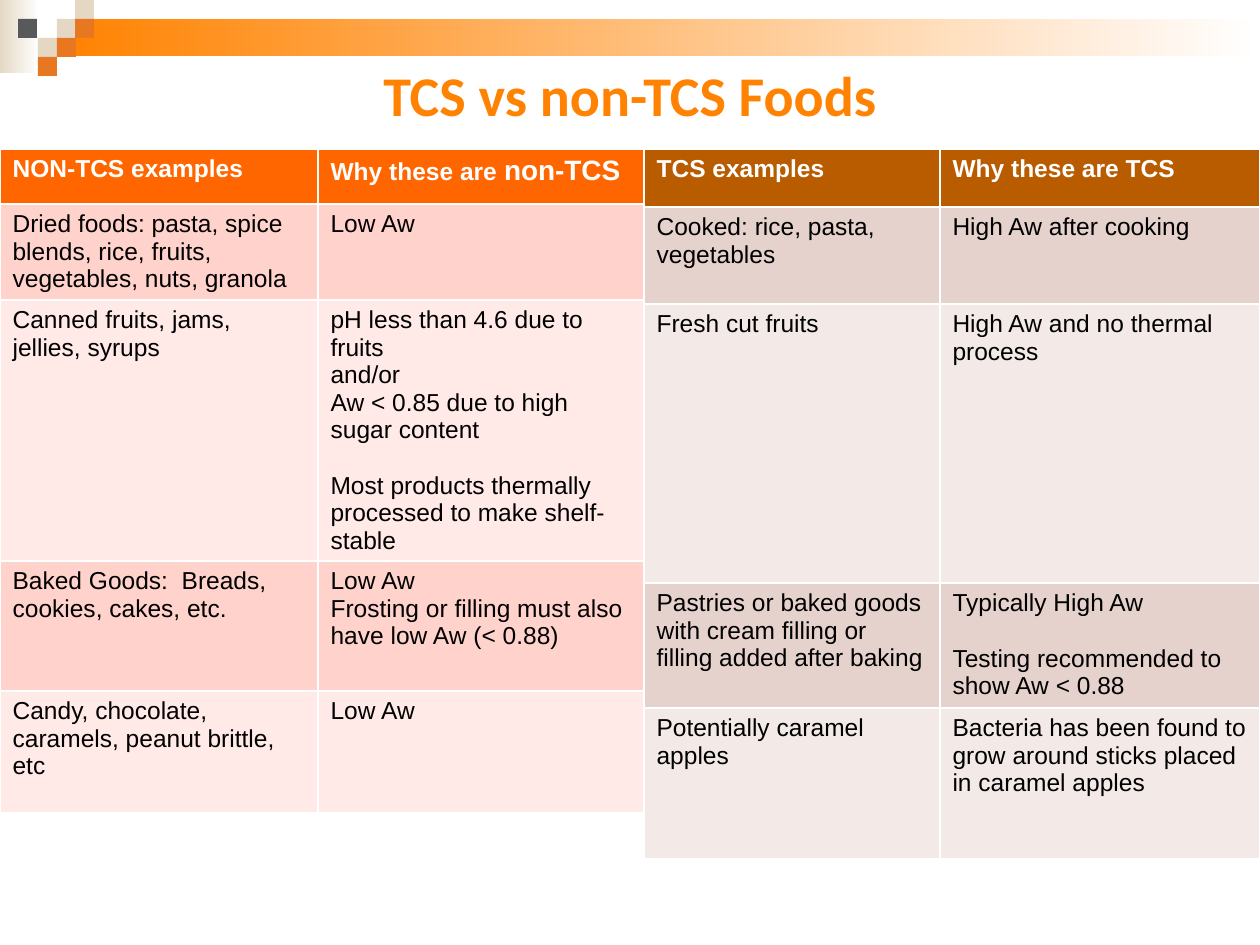
"""Build the slide that compares TCS and non-TCS foods in two tables."""
from pptx import Presentation
from pptx.dml.color import RGBColor
from pptx.enum.shapes import MSO_SHAPE
from pptx.enum.text import MSO_ANCHOR, PP_ALIGN
from pptx.util import Emu, Pt

RECTANGLE = MSO_SHAPE.RECTANGLE
MIDDLE = MSO_ANCHOR.MIDDLE
CENTER = PP_ALIGN.CENTER

WHITE = RGBColor(0xFF, 0xFF, 0xFF)
BLACK = RGBColor(0x00, 0x00, 0x00)
ORANGE = RGBColor(0xFF, 0x82, 0x00)
DARK_ORANGE = RGBColor(0xE8, 0x77, 0x22)
SAND = RGBColor(0xE4, 0xD8, 0xC4)
GRAY = RGBColor(0x58, 0x59, 0x5B)
NON_TCS_HEADER = RGBColor(0xFF, 0x66, 0x00)
NON_TCS_BANDS = [RGBColor(0xFF, 0xD3, 0xCC), RGBColor(0xFF, 0xEA, 0xE7)]
TCS_HEADER = RGBColor(0xB9, 0x5C, 0x00)
TCS_BANDS = [RGBColor(0xE6, 0xD2, 0xCC), RGBColor(0xF3, 0xEA, 0xE7)]

SQUARE = 19
TABLE_TOP = 149


def px(length):
    return Emu(round(length * 914400 / 126))


def add_rectangle(left, top, width, height):
    shape = slide.shapes.add_shape(
        RECTANGLE, px(left), px(top), px(width), px(height)
    )
    shape.shadow.inherit = False
    shape.line.fill.background()
    return shape


presentation = Presentation()
presentation.slide_width = px(1260)
presentation.slide_height = px(945)
slide = presentation.slides.add_slide(presentation.slide_layouts[5])

for left, top, width, height, color in [
    (0, 0, 39, 73, SAND),
    (57, 19, 1203, 37, ORANGE),
]:
    fill = add_rectangle(left, top, width, height).fill
    fill.gradient()
    fill.gradient_angle = 0
    for stop, stop_color, position in zip(fill.gradient_stops, (color, WHITE), (0, 1)):
        stop.color.rgb = stop_color
        stop.position = position

for left, top, color in [
    (57, 19, SAND),
    (75, 0, SAND),
    (75, 19, DARK_ORANGE),
    (38, 38, SAND),
    (18, 19, GRAY),
    (57, 38, DARK_ORANGE),
    (38, 57, DARK_ORANGE),
]:
    fill = add_rectangle(left, top, SQUARE, SQUARE).fill
    fill.solid()
    fill.fore_color.rgb = color

title = slide.shapes.title
slide.shapes.element.append(title.element)
title.left, title.top, title.width, title.height = px(63), px(0), px(1134), px(189)
title.text_frame.text = "TCS vs non-TCS Foods"
title.text_frame.vertical_anchor = MIDDLE
paragraph = title.text_frame.paragraphs[0]
paragraph.alignment = CENTER
font = paragraph.runs[0].font
font.name, font.size, font.bold = "Calibri", Pt(32), True
font.color.rgb = ORANGE

non_tcs_rows = [
    ("NON-TCS examples", "Why these are "),
    ("Dried foods: pasta, spice blends, rice, fruits, vegetables, nuts, granola", "Low Aw"),
    (
        "Canned fruits, jams, jellies, syrups",
        "pH less than 4.6 due to fruits\nand/or\nAw < 0.85 due to high sugar content"
        "\n\nMost products thermally processed to make shelf-stable",
    ),
    (
        "Baked Goods:  Breads, cookies, cakes, etc.",
        "Low Aw\nFrosting or filling must also have low Aw (< 0.88)",
    ),
    ("Candy, chocolate, caramels, peanut brittle, etc", "Low Aw"),
]
tcs_rows = [
    ("TCS examples", "Why these are TCS"),
    ("Cooked: rice, pasta, vegetables", "High Aw after cooking"),
    ("Fresh cut fruits", "High Aw and no thermal process"),
    (
        "Pastries or baked goods with cream filling or filling added after baking",
        "Typically High Aw\n\nTesting recommended to show Aw < 0.88",
    ),
    (
        "Potentially caramel apples",
        "Bacteria has been found to grow around sticks placed in caramel apples",
    ),
]

tables = []
for left, widths, heights, rows, header_color, bands in [
    (0, (318, 326), (55, 96, 261, 130, 122), non_tcs_rows, NON_TCS_HEADER, NON_TCS_BANDS),
    (644, (296, 320), (58, 97, 279, 125, 151), tcs_rows, TCS_HEADER, TCS_BANDS),
]:
    table = slide.shapes.add_table(
        len(rows), len(widths), px(left), px(TABLE_TOP), px(sum(widths)), px(sum(heights))
    ).table
    tables.append(table)
    for column, width in zip(table.columns, widths):
        column.width = px(width)
    for row_index, (height, texts) in enumerate(zip(heights, rows)):
        is_header = row_index == 0
        table.rows[row_index].height = px(height)
        for column_index, text in enumerate(texts):
            cell = table.cell(row_index, column_index)
            cell.fill.solid()
            cell.fill.fore_color.rgb = header_color if is_header else bands[(row_index - 1) % 2]
            blocks = text.split("\n\n")
            cell.text_frame.text = "\n".join(blocks)
            for paragraph in cell.text_frame.paragraphs:
                if paragraph.text in blocks[1:]:
                    paragraph.space_before = Pt(16)
                for run in paragraph.runs:
                    run.font.name, run.font.size = "Arial", Pt(14)
                    run.font.bold = is_header
                    run.font.color.rgb = WHITE if is_header else BLACK

emphasis = tables[0].cell(0, 1).text_frame.paragraphs[0].add_run()
emphasis.text = "non-TCS"
emphasis.font.name, emphasis.font.size, emphasis.font.bold = "Arial", Pt(16), True
emphasis.font.color.rgb = WHITE

presentation.save("out.pptx")
